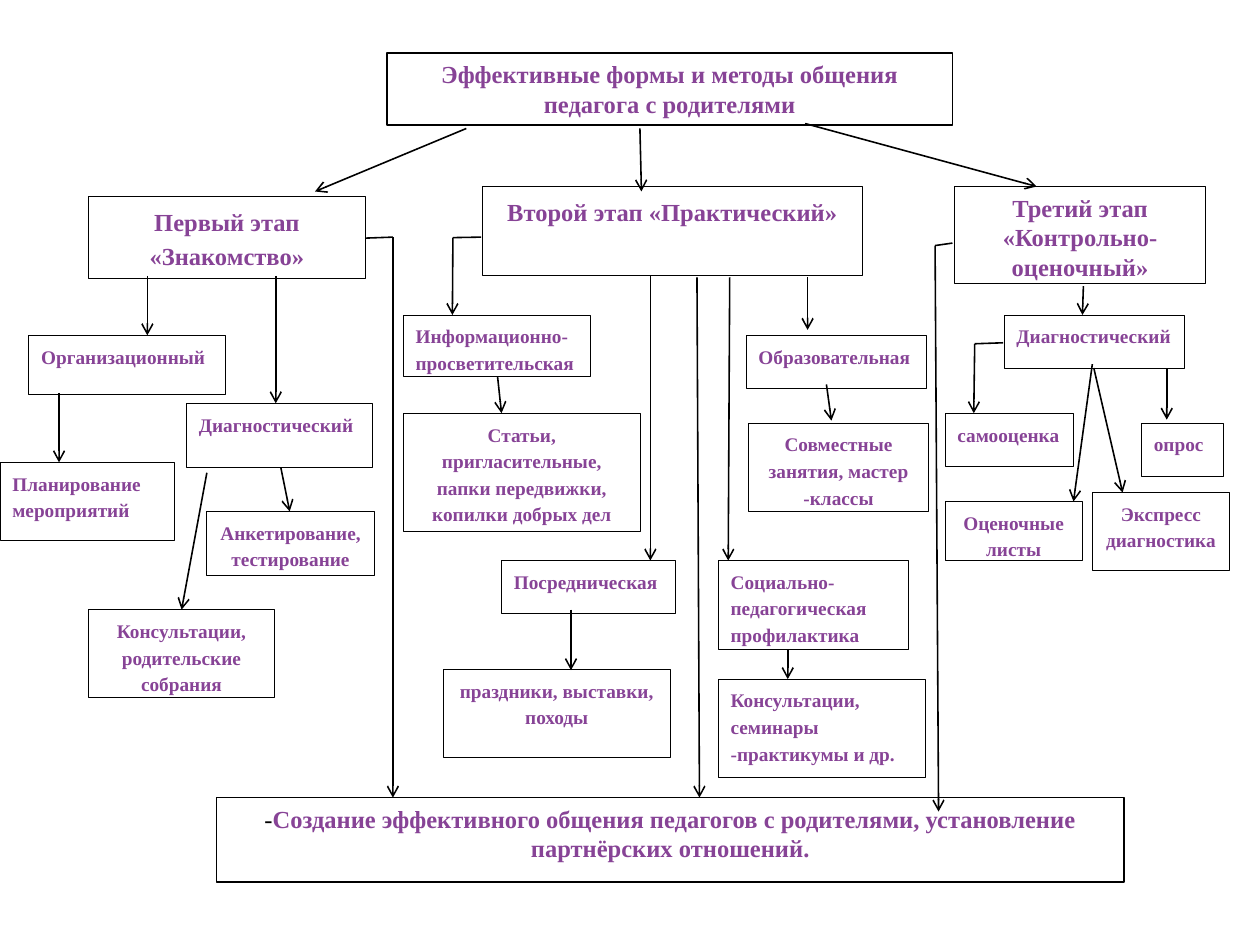
from dataclasses import dataclass
from itertools import pairwise

import pptx
import pptx.dml.color
import pptx.enum.shapes
import pptx.enum.text
import pptx.oxml
import pptx.oxml.ns
import pptx.util
from pptx.util import Cm

RGB = pptx.dml.color.RGBColor
LEFT = pptx.enum.text.PP_ALIGN.LEFT
CENTER = pptx.enum.text.PP_ALIGN.CENTER


@dataclass(frozen=True)
class Theme:
    font: str = "Times New Roman"
    text: RGB = RGB(0x87, 0x43, 0x96)
    ink: RGB = RGB(0, 0, 0)
    paper: RGB = RGB(255, 255, 255)
    heading: float = 14
    body: float = 11
    thin: float = 0.5
    frame: float = 0.75
    arrow: float = 0.9


THEME = Theme()


@dataclass(frozen=True)
class Box:
    """A framed label; left, top, width and height are in centimetres."""
    text: str
    left: float
    top: float
    width: float
    height: float
    align: int = LEFT
    size: float = THEME.body
    border: float = THEME.thin
    loose: bool = True


HEADING = Box("Эффективные формы и методы общения\nпедагога с родителями",
              7.8, 1.07, 11.4, 1.45, CENTER, THEME.heading, THEME.frame, False)
RESULT = Box("Создание эффективного общения педагогов с родителями, "
             "установление партнёрских отношений.",
             4.37, 16.08, 18.29, 1.7, CENTER, THEME.heading, THEME.frame, False)

BOXES = [
    # First stage
    Box("Первый этап «Знакомство»", 1.78, 3.96, 5.59, 1.65, CENTER, THEME.heading),
    Box("Организационный", 0.58, 6.76, 3.96, 1.19),
    Box("Диагностический", 3.76, 8.13, 3.76, 1.3),
    Box("Планирование мероприятий", 0, 9.32, 3.51, 1.57),
    Box("Анкетирование, тестирование", 4.17, 10.31, 3.38, 1.3, CENTER),
    Box("Консультации, родительские собрания", 1.78, 12.29, 3.76, 1.78, CENTER),
    # Second stage
    Box("Второй этап «Практический»", 9.73, 3.76, 7.65, 1.8, CENTER, THEME.heading),
    Box("Информационно-просветительская", 8.13, 6.35, 3.78, 1.24),
    Box("Образовательная", 15.04, 6.76, 3.63, 1.07),
    Box("Статьи, пригласительные, папки передвижки, копилки добрых дел",
        8.13, 8.33, 4.78, 2.39, CENTER),
    Box("Совместные занятия, мастер -классы", 15.09, 8.53, 3.63, 1.78, CENTER),
    Box("Посредническая", 10.11, 11.3, 3.51, 1.07),
    Box("Социально-педагогическая профилактика", 14.48, 11.3, 3.84, 1.8),
    Box("праздники, выставки, походы", 8.94, 13.49, 4.57, 1.78, CENTER),
    Box("Консультации, семинары -практикумы и др.", 14.48, 13.69, 4.17, 1.98),
    # Third stage
    Box("Третий этап\n«Контрольно-оценочный»", 19.25, 3.76, 5.05, 1.96,
        CENTER, THEME.heading, loose=False),
    Box("Диагностический", 20.24, 6.35, 3.63, 1.07),
    Box("самооценка", 19.05, 8.33, 2.59, 1.07),
    Box("опрос", 23.01, 8.53, 1.65, 1.07),
    Box("Оценочные листы", 19.05, 10.11, 2.77, 1.19, CENTER),
    Box("Экспресс диагностика", 22.02, 9.93, 2.77, 1.57, CENTER),
]

Route = tuple[tuple[float, float], ...]

ROUTES: list[Route] = [
    # Heading to stages
    ((9.4, 2.59), (6.35, 3.86)),
    ((12.9, 2.59), (12.93, 3.86)),
    ((16.23, 2.49), (20.9, 3.76)),
    # Stages to result
    ((7.37, 4.8), (7.92, 4.78), (7.92, 16.08)),
    ((14.05, 5.59), (14.1, 16.08)),
    ((19.2, 4.9), (18.85, 4.95), (18.92, 16.36)),
    # First stage
    ((2.97, 5.56), (2.97, 6.76)),
    ((5.56, 5.56), (5.56, 8.13)),
    ((1.19, 7.92), (1.19, 9.32)),
    ((4.17, 9.53), (3.66, 12.29)),
    ((5.66, 9.42), (5.84, 10.31)),
    # Second stage
    ((9.7, 4.78), (9.13, 4.79), (9.12, 6.35)),
    ((13.11, 5.56), (13.11, 11.3)),
    ((14.71, 5.59), (14.68, 11.3)),
    ((16.28, 5.59), (16.28, 6.65)),
    ((10.03, 7.59), (10.11, 8.33)),
    ((16.66, 7.75), (16.76, 8.48)),
    ((11.51, 12.29), (11.51, 13.51)),
    ((15.88, 13.11), (15.88, 13.69)),
    # Third stage
    ((21.84, 5.77), (21.82, 6.35)),
    ((20.22, 6.91), (19.65, 6.93), (19.63, 8.33)),
    ((22.02, 7.34), (21.64, 10.11)),
    ((22.05, 7.42), (22.63, 9.93)),
    ((23.52, 7.44), (23.52, 8.46)),
]


def format_box(shape, box: Box) -> None:
    shape.left, shape.top = Cm(box.left), Cm(box.top)
    shape.width, shape.height = Cm(box.width), Cm(box.height)
    shape.shadow.inherit = False
    shape.fill.solid()
    shape.fill.fore_color.rgb = THEME.paper
    shape.line.color.rgb = THEME.ink
    shape.line.width = pptx.util.Pt(box.border)
    frame = shape.text_frame
    frame.text = box.text
    frame.word_wrap = True
    frame.auto_size = pptx.enum.text.MSO_AUTO_SIZE.NONE
    frame.vertical_anchor = pptx.enum.text.MSO_ANCHOR.TOP
    for paragraph in frame.paragraphs:
        paragraph.alignment = box.align
        if box.loose:
            paragraph.line_spacing = 1.15
            paragraph.space_after = pptx.util.Pt(10)
        paragraph.font.name = THEME.font
        paragraph.font.size = pptx.util.Pt(box.size)
        paragraph.font.bold = True
        paragraph.font.color.rgb = THEME.text


def add_box(slide, box: Box):
    shape = slide.shapes.add_shape(
        pptx.enum.shapes.MSO_SHAPE.RECTANGLE,
        Cm(box.left), Cm(box.top), Cm(box.width), Cm(box.height))
    format_box(shape, box)
    return shape


def add_result(slide) -> None:
    """Draw the result box, whose leading dash is plain black."""
    paragraph = add_box(slide, RESULT).text_frame.paragraphs[0]
    dash, statement = paragraph.runs[0], paragraph.add_run()
    statement.text, dash.text = dash.text, "-"
    dash.font.bold = False
    dash.font.color.rgb = THEME.ink


def add_route(slide, route: Route) -> None:
    """Join the points with straight lines; the last one ends in an arrowhead."""
    for start, end in pairwise(route):
        line = slide.shapes.add_connector(
            pptx.enum.shapes.MSO_CONNECTOR.STRAIGHT, *map(Cm, start + end))
        line.line.color.rgb = THEME.ink
        line.line.width = pptx.util.Pt(THEME.arrow)
        properties = line._element.spPr
        pptx.oxml.ns.qn("a:effectLst")
        properties.append(properties.makeelement(pptx.oxml.ns.qn("a:effectLst"), {}))
    outline = line.line._get_or_add_ln()
    outline.append(outline.makeelement(pptx.oxml.ns.qn("a:tailEnd"), {"type": "arrow"}))


def main() -> None:
    deck = pptx.Presentation()
    deck.slide_width, deck.slide_height = Cm(25.4), Cm(19.05)
    slide = deck.slides.add_slide(deck.slide_layouts[5])
    format_box(slide.shapes.title, HEADING)
    for box in BOXES:
        add_box(slide, box)
    add_result(slide)
    for route in ROUTES:
        add_route(slide, route)
    deck.save("out.pptx")


if __name__ == "__main__":
    main()
